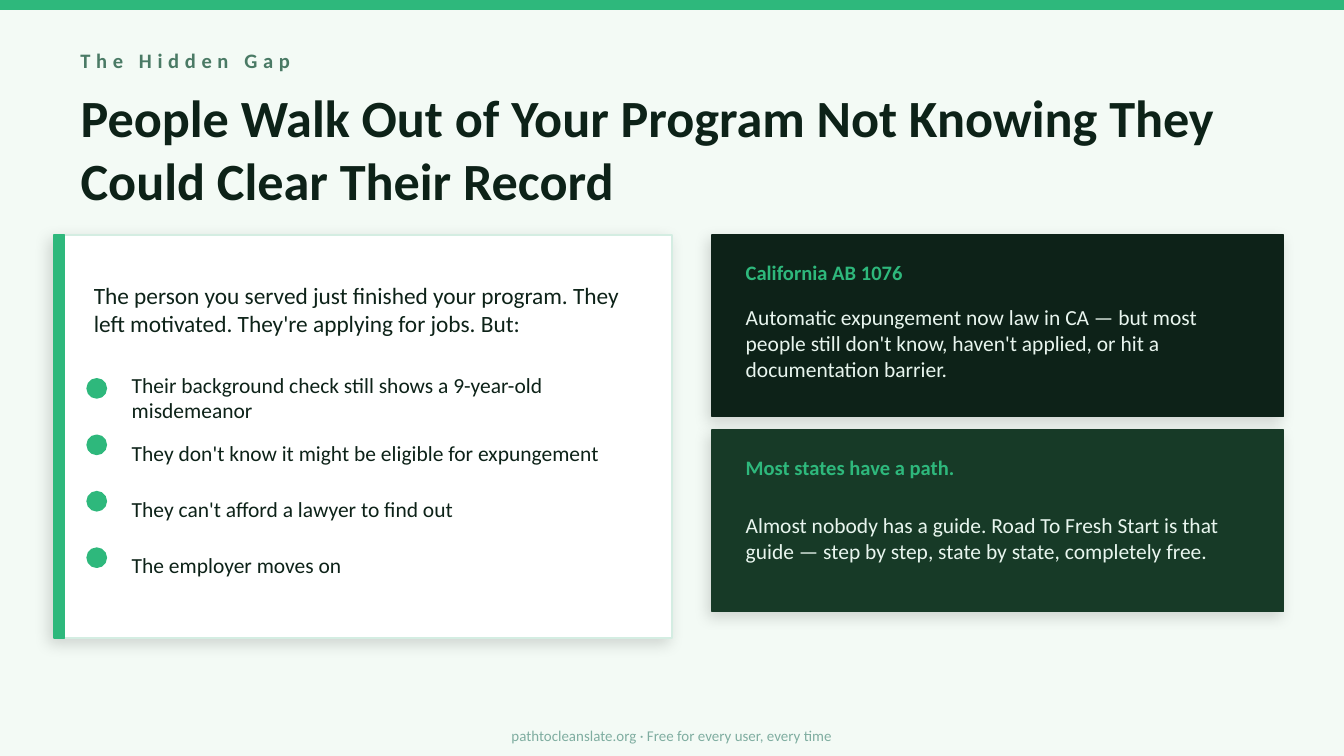
"""Build the Hidden Gap slide."""
from dataclasses import dataclass
from typing import Optional

from lxml.etree import SubElement
from pptx import Presentation
from pptx.dml.color import RGBColor
from pptx.enum.shapes import MSO_SHAPE
from pptx.enum.text import MSO_ANCHOR, MSO_AUTO_SIZE, PP_ALIGN
from pptx.oxml.ns import qn
from pptx.shapes.autoshape import Shape
from pptx.slide import Slide
from pptx.util import Pt

GREEN = RGBColor(0x2E, 0xB8, 0x7C)
INK = RGBColor(0x0D, 0x22, 0x18)
FOREST = RGBColor(0x17, 0x3A, 0x27)
MOSS = RGBColor(0x4A, 0x7A, 0x65)
SAGE = RGBColor(0x7F, 0xAD, 0xA0)
MINT = RGBColor(0xD4, 0xED, 0xE2)
PALE = RGBColor(0xE8, 0xF5, 0xEE)
MIST = RGBColor(0xF3, 0xFA, 0xF5)
WHITE = RGBColor(0xFF, 0xFF, 0xFF)

FONT = "Calibri"
WIDTH, HEIGHT = 720, 405
TOP = 126
CARD_STEP = 104.4
DOT_TOP, DOT_STEP, DOT_SIZE = 203.04, 30.24, 10.08


@dataclass
class Box:
    left: float
    top: float
    width: float
    height: float


@dataclass
class Style:
    size: float
    color: RGBColor
    bold: bool = False
    align: PP_ALIGN = PP_ALIGN.LEFT


@dataclass
class Card:
    fill: RGBColor
    head: str
    body: str


@dataclass
class Item:
    text: str
    gap: float


CARDS = [
    Card(INK, "California AB 1076",
         "Automatic expungement now law in CA — but most people still don't know, "
         "haven't applied, or hit a documentation barrier."),
    Card(FOREST, "Most states have a path.",
         "Almost nobody has a guide. Road To Fresh Start is that guide — "
         "step by step, state by state, completely free."),
]
ITEMS = [
    Item("Their background check still shows a 9-year-old misdemeanor", 0),
    Item("They don't know it might be eligible for expungement", 9.2),
    Item("They can't afford a lawyer to find out", 16.2),
    Item("The employer moves on", 16.2),
]
LABEL = Style(11, GREEN, True)
COPY = Style(11.5, PALE)


def place(shape: Shape, box: Box, anchor: MSO_ANCHOR = MSO_ANCHOR.MIDDLE) -> None:
    shape.left, shape.top = Pt(box.left), Pt(box.top)
    shape.width, shape.height = Pt(box.width), Pt(box.height)
    frame = shape.text_frame
    frame.word_wrap = True
    frame.auto_size = MSO_AUTO_SIZE.NONE
    frame.vertical_anchor = anchor


def format_text(shape: Shape, style: Style) -> None:
    for line in shape.text_frame.paragraphs:
        line.alignment = style.align
        for run in line.runs:
            font = run.font
            font.name, font.size, font.bold = FONT, Pt(style.size), style.bold
            font.color.rgb = style.color


def add_text(slide: Slide, box: Box, text: str, style: Style) -> Shape:
    shape = slide.shapes.add_textbox(0, 0, 0, 0)
    place(shape, box)
    shape.text_frame.text = text
    format_text(shape, style)
    return shape


def add_block(slide: Slide, box: Box, fill: RGBColor, edge: Optional[RGBColor] = None,
              kind: MSO_SHAPE = MSO_SHAPE.RECTANGLE, shade: bool = False) -> None:
    shape = slide.shapes.add_shape(
        kind, Pt(box.left), Pt(box.top), Pt(box.width), Pt(box.height))
    shape.fill.solid()
    shape.fill.fore_color.rgb = fill
    shape.line.color.rgb = edge or fill
    shape.line.width = Pt(1)
    shape.shadow.inherit = False
    if shade:
        effects = shape._element.spPr.find(qn("a:effectLst"))
        outer = SubElement(effects, qn("a:outerShdw"), blurRad=str(Pt(8)),
                           dist=str(Pt(3)), dir="8100000", algn="bl", rotWithShape="0")
        black = SubElement(outer, qn("a:srgbClr"), val="000000")
        SubElement(black, qn("a:alpha"), val="14000")


def add_list(slide: Slide) -> None:
    body = slide.placeholders[1]
    slide.shapes._spTree.append(body._element)
    place(body, Box(63.36, 195.5, 280.8, 122), MSO_ANCHOR.TOP)
    frame = body.text_frame
    frame.text = "\n".join(item.text for item in ITEMS)
    for row, (line, item) in enumerate(zip(frame.paragraphs, ITEMS)):
        props = line._p.get_or_add_pPr()
        props.set("marL", "0")
        props.set("indent", "0")
        SubElement(props, qn("a:buNone"))
        line.space_before = Pt(item.gap)
        dot = Box(46.8, DOT_TOP + row * DOT_STEP, DOT_SIZE, DOT_SIZE)
        add_block(slide, dot, GREEN, kind=MSO_SHAPE.OVAL)
    format_text(body, Style(11.5, INK))


def add_card(slide: Slide, card: Card, top: float) -> None:
    add_block(slide, Box(381.6, top, 306, 97.2), card.fill, shade=True)
    add_text(slide, Box(392.4, top + 7.2, 288, 25.2), card.head, LABEL)
    add_text(slide, Box(392.4, top + 30.6, 284.4, 54), card.body, COPY)


def main() -> None:
    deck = Presentation()
    deck.slide_width, deck.slide_height = Pt(WIDTH), Pt(HEIGHT)
    slide = deck.slides.add_slide(deck.slide_layouts[1])
    slide.background.fill.solid()
    slide.background.fill.fore_color.rgb = MIST

    add_block(slide, Box(0, 0, WIDTH, 5.04), GREEN)
    label = add_text(slide, Box(36, 18, 648, 28.8), "The Hidden Gap", Style(11, MOSS, True))
    label.text_frame.paragraphs[0].runs[0].font._element.set("spc", "300")
    title = slide.shapes.title
    place(title, Box(36, 43.2, 648, 72))
    title.text_frame.text = (
        "People Walk Out of Your Program Not Knowing They Could Clear Their Record")
    format_text(title, Style(28, INK, True))

    add_block(slide, Box(28.8, TOP, 331.2, 216), WHITE, MINT, shade=True)
    add_block(slide, Box(28.8, TOP, 5.76, 216), GREEN)
    add_text(slide, Box(43.2, 136.8, 302.4, 57.6),
             "The person you served just finished your program. They left motivated. "
             "They're applying for jobs. But:", Style(12.5, INK))
    add_list(slide)
    for row, card in enumerate(CARDS):
        add_card(slide, card, TOP + row * CARD_STEP)
    add_text(slide, Box(0, 385.2, WIDTH, 18),
             "pathtocleanslate.org · Free for every user, every time",
             Style(8, SAGE, align=PP_ALIGN.CENTER))
    deck.save("out.pptx")


if __name__ == "__main__":
    main()
